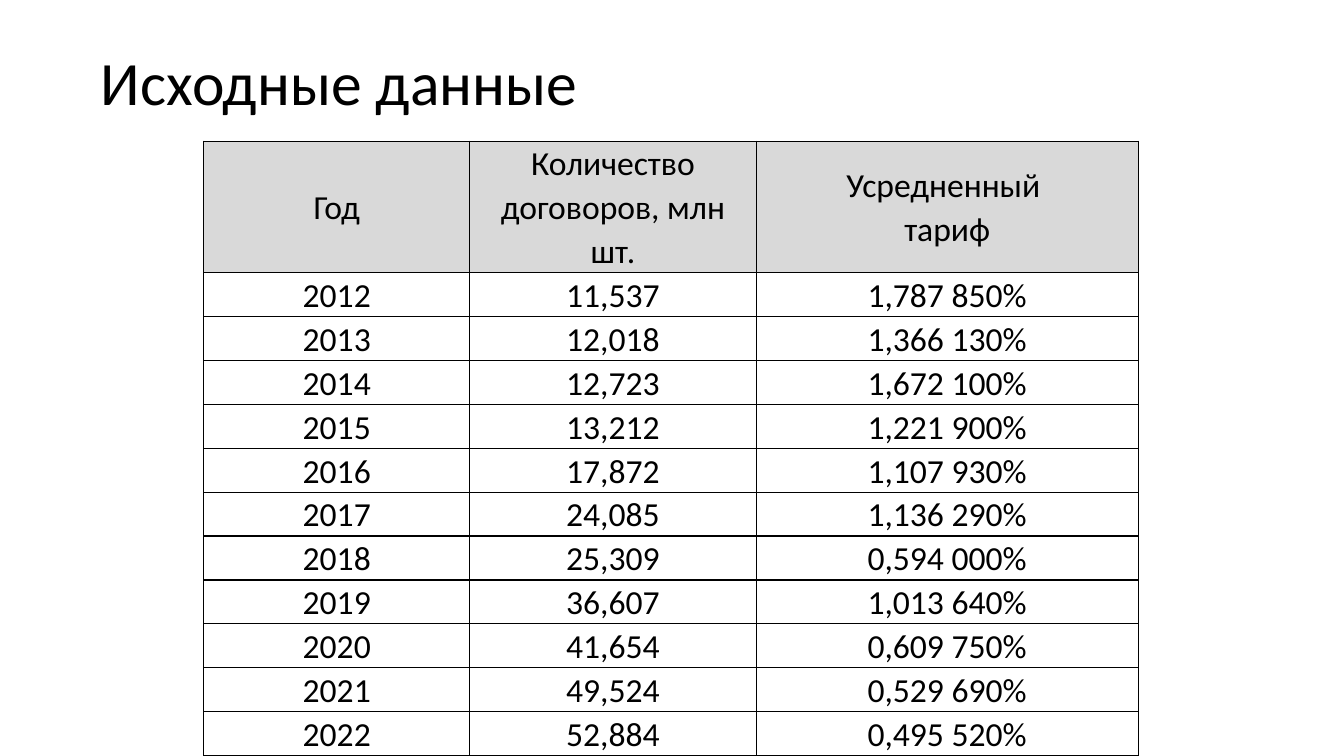
import pptx
import pptx.util
import pptx.dml.color
import pptx.enum.text
import pptx.oxml
import pptx.oxml.ns

Inches, Pt = pptx.util.Inches, pptx.util.Pt
RGB = pptx.dml.color.RGBColor.from_string
ALIGN, ANCHOR = pptx.enum.text.PP_ALIGN, pptx.enum.text.MSO_ANCHOR

COLORS = {"text": "000000", "border": "000000", "header": "D9D9D9"}
FONT = "Calibri"
HEADER = ("Год", "Количество договоров, млн шт.", "Усредненный \vтариф")
DATA = [
    ("2012", "11,537", "1,787 850%"),
    ("2013", "12,018", "1,366 130%"),
    ("2014", "12,723", "1,672 100%"),
    ("2015", "13,212", "1,221 900%"),
    ("2016", "17,872", "1,107 930%"),
    ("2017", "24,085", "1,136 290%"),
    ("2018", "25,309", "0,594 000%"),
    ("2019", "36,607", "1,013 640%"),
    ("2020", "41,654", "0,609 750%"),
    ("2021", "49,524", "0,529 690%"),
    ("2022", "52,884", "0,495 520%"),
]
COL_WIDTHS = (2.64, 2.84, 3.79)
HEADER_HEIGHT, ROW_HEIGHT = 1.1, 0.36


def style_runs(p, size):
    for r in p.runs:
        r.font.size = Pt(size)
        r.font.name = FONT
        r.font.color.rgb = RGB(COLORS["text"])


def add_borders(cell):
    tcPr = cell._tc.get_or_add_tcPr()
    for side in ("lnL", "lnR", "lnT", "lnB"):
        tcPr.append(pptx.oxml.parse_xml(
            f'<a:{side} {pptx.oxml.ns.nsdecls("a")} w="{Pt(1)}"><a:solidFill>'
            f'<a:srgbClr val="{COLORS["border"]}"/></a:solidFill></a:{side}>'))


prs = pptx.Presentation()
prs.slide_width, prs.slide_height = Inches(13.33), Inches(7.5)
s = prs.slides.add_slide(prs.slide_layouts[5])

# Title
title = s.shapes.title
title.left, title.top = Inches(0.9), Inches(0.12)
title.width, title.height = Inches(11.5), Inches(1.45)
tf = title.text_frame
tf.text = "Исходные данные"
tf.vertical_anchor = ANCHOR.MIDDLE
p = tf.paragraphs[0]
p.alignment = ALIGN.LEFT
p.line_spacing = 0.9
style_runs(p, 44)

# Table of contracts and tariffs by year
rows = [HEADER] + DATA
table = s.shapes.add_table(
    len(rows), len(HEADER), Inches(2.02), Inches(1.4), Inches(sum(COL_WIDTHS)),
    Inches(HEADER_HEIGHT + ROW_HEIGHT * len(DATA))).table
table.first_row = table.horz_banding = False
for column, width in zip(table.columns, COL_WIDTHS):
    column.width = Inches(width)

for i, values in enumerate(rows):
    table.rows[i].height = Inches(ROW_HEIGHT if i else HEADER_HEIGHT)
    body_anchors = (ANCHOR.BOTTOM, ANCHOR.TOP, ANCHOR.BOTTOM)
    for j, value in enumerate(values):
        cell = table.cell(i, j)
        cell.margin_left = cell.margin_right = Inches(0.07)
        cell.margin_top = cell.margin_bottom = 0
        cell.vertical_anchor = body_anchors[j] if i else ANCHOR.MIDDLE
        add_borders(cell)
        if i:
            cell.fill.background()
        else:
            cell.fill.solid()
            cell.fill.fore_color.rgb = RGB(COLORS["header"])
        p = cell.text_frame.paragraphs[0]
        p.text = value
        p.alignment = ALIGN.CENTER
        p.line_spacing = 1.07
        p.space_after = Pt(8)
        style_runs(p, 24)

prs.save("out.pptx")
